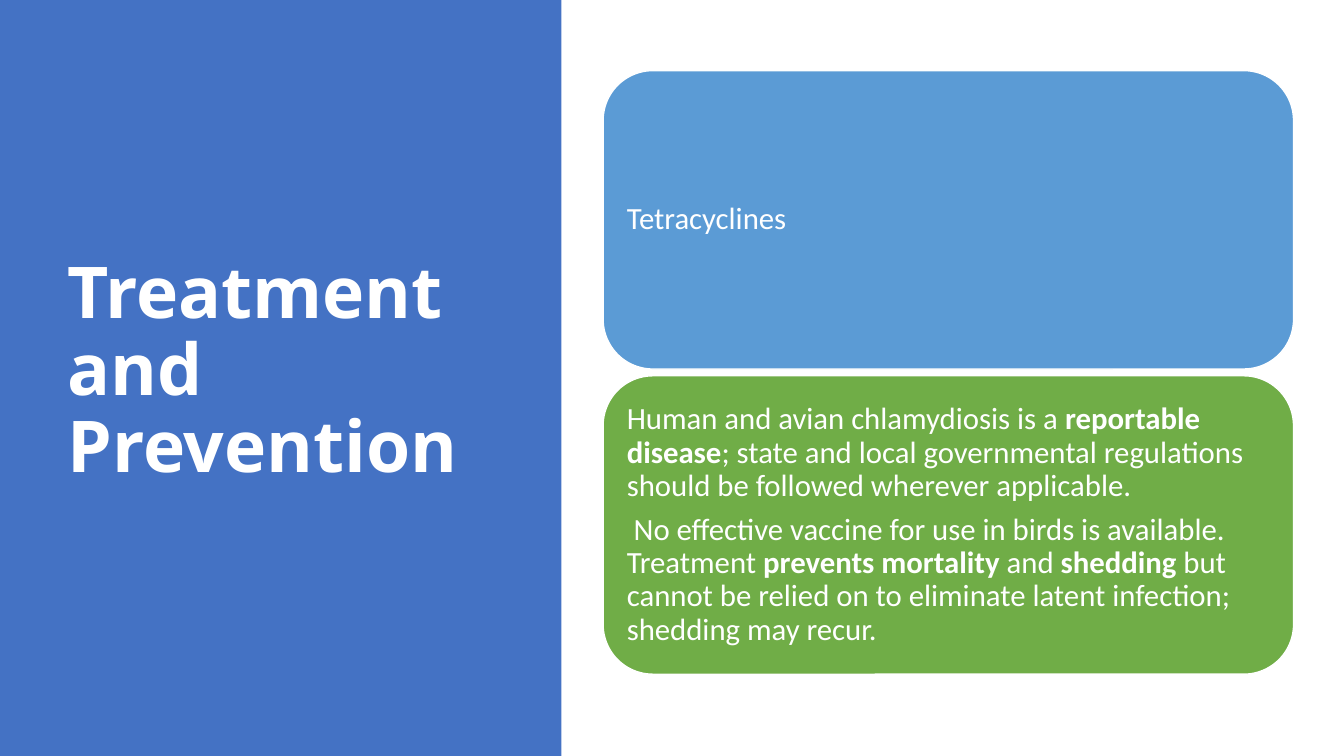
import pptx
import pptx.util
import pptx.dml.color
import pptx.enum.shapes
import pptx.enum.text

Cm, Pt = pptx.util.Cm, pptx.util.Pt
Shape = pptx.enum.shapes.MSO_SHAPE
Anchor = pptx.enum.text.MSO_ANCHOR
Align = pptx.enum.text.PP_ALIGN

COLORS = {"panel": "4472C4", "drug": "5B9BD5", "rule": "70AD47", "white": "FFFFFF"}


def color(name):
    return pptx.dml.color.RGBColor.from_string(COLORS[name])


def write(frame, paras, font="Calibri", size=22, after=0, inset=0.23):
    """Fill a frame; each paragraph is a list of (text, bold) runs."""
    frame.word_wrap = True
    frame.auto_size = pptx.enum.text.MSO_AUTO_SIZE.NONE
    frame.vertical_anchor = Anchor.MIDDLE
    frame.margin_left = frame.margin_right = Cm(inset)
    frame.margin_top = frame.margin_bottom = Cm(inset)
    for i, runs in enumerate(paras):
        para = frame.paragraphs[0] if i == 0 else frame.add_paragraph()
        para.alignment = Align.LEFT
        para.line_spacing = 0.9
        para.space_after = Pt(after)
        for text, bold in runs:
            run = para.add_run()
            run.text = text
            run.font.name = font
            run.font.size = Pt(size)
            run.font.bold = bold
            run.font.color.rgb = color("white")


class Deck:
    def __init__(self):
        self.file = pptx.Presentation()
        self.file.slide_width, self.file.slide_height = Cm(33.87), Cm(19.05)
        self.slide = self.file.slides.add_slide(self.file.slide_layouts[5])

    def block(self, kind, box, fill, line=None):
        shape = self.slide.shapes.add_shape(kind, *map(Cm, box))
        shape.shadow.inherit = False
        shape.fill.solid()
        shape.fill.fore_color.rgb = color(fill)
        if line:
            shape.line.color.rgb = color(line)
            shape.line.width = Pt(1)
        else:
            shape.line.fill.background()
        return shape

    def panel(self, box, fill):
        shape = self.block(Shape.RECTANGLE, box, fill)
        # Send the panel behind the title
        self.slide.shapes._spTree.insert(2, shape._element)

    def title(self, box, text):
        title = self.slide.shapes.title
        title.left, title.top, title.width, title.height = map(Cm, box)
        write(title.text_frame, [[(text, True)]], font="Open Sans", size=51, inset=0.25)

    def card(self, box, fill, paras):
        shape = self.block(Shape.ROUNDED_RECTANGLE, box, fill, line="white")
        write(shape.text_frame, paras, after=7.7)


def main():
    deck = Deck()

    # Left panel with the title
    deck.panel((0, 0, 14.15, 19.05), "panel")
    deck.title((1.45, 1.73, 10.57, 15.29), "Treatment and Prevention")

    # Stacked cards
    cards = [
        ("drug", [[("Tetracyclines", False)]]),
        ("rule", [
            [("Human and avian chlamydiosis is a ", False),
             ("reportable disease", True),
             ("; state and local governmental regulations should be "
              "followed wherever applicable.", False)],
            [(" No effective vaccine for use in birds is available. Treatment ", False),
             ("prevents mortality ", True),
             ("and ", False),
             ("shedding", True),
             (" but cannot be relied on to eliminate latent infection; "
              "shedding may recur.", False)],
        ]),
    ]
    left, top, width, height, gap = 15.2, 1.78, 17.4, 7.52, 0.17
    for i, (fill, paras) in enumerate(cards):
        deck.card((left, top + i * (height + gap), width, height), fill, paras)

    deck.file.save("out.pptx")


if __name__ == "__main__":
    main()
